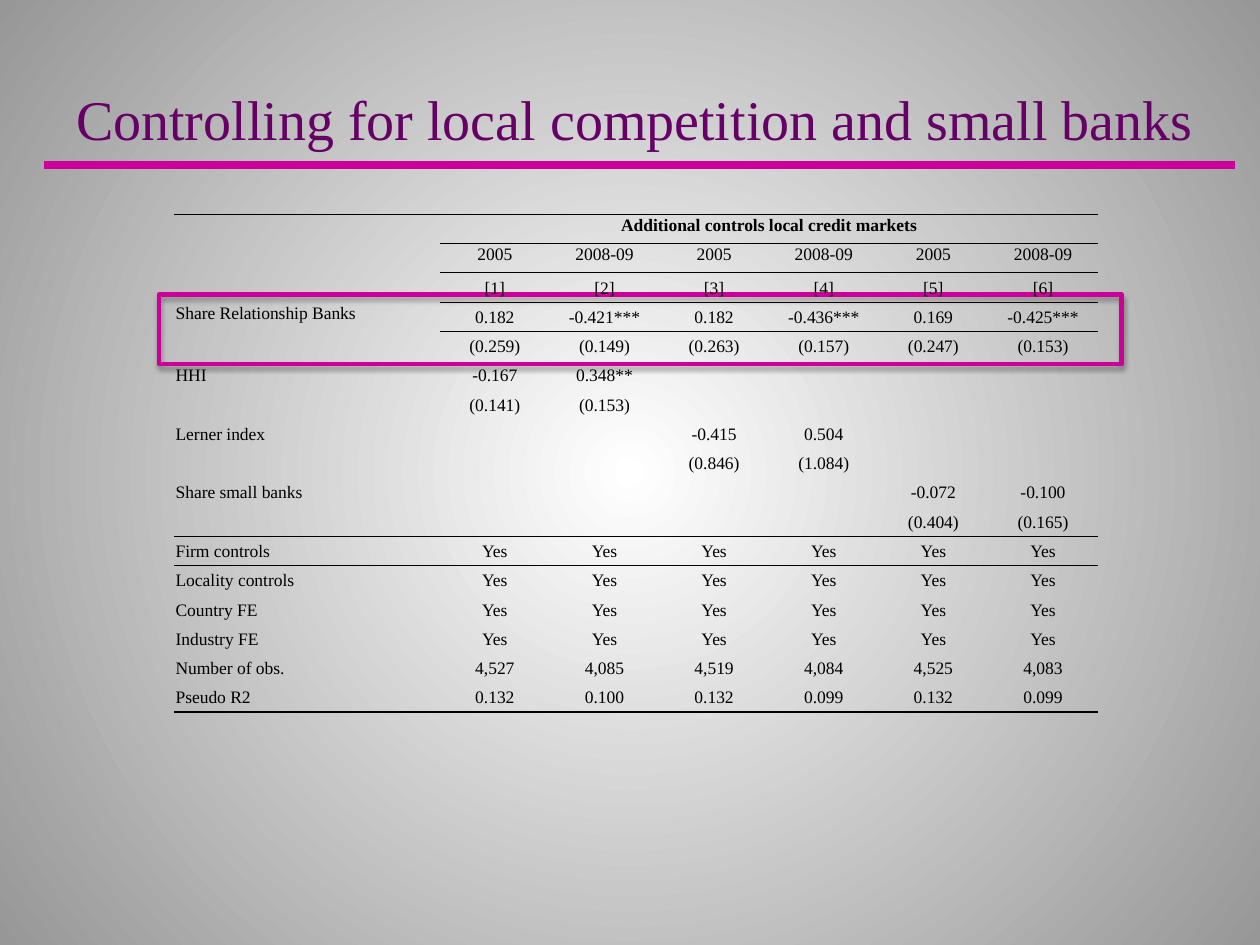
from lxml.etree import SubElement
from pptx import Presentation
from pptx.dml.color import RGBColor
from pptx.enum.shapes import MSO_CONNECTOR, MSO_SHAPE
from pptx.enum.text import MSO_ANCHOR, PP_ALIGN
from pptx.oxml.ns import qn
from pptx.util import Cm, Pt

FONT = "Times New Roman"
MAGENTA = "CC0099"
PURPLE = "660066"
BLACK = "000000"
NO_GRID_STYLE = "{2D5ABB26-0587-4C30-8999-92F81FD0307C}"

YES = ["Yes"] * 6
ROWS = [
    ["", "Additional controls local credit markets"] + [""] * 5,
    [""] + ["2005", "2008-09"] * 3,
    [""] + [f"[{n}]" for n in range(1, 7)],
    ["Share Relationship Banks", "0.182", "-0.421***", "0.182", "-0.436***", "0.169", "-0.425***"],
    ["", "(0.259)", "(0.149)", "(0.263)", "(0.157)", "(0.247)", "(0.153)"],
    ["HHI", "-0.167", "0.348**", "", "", "", ""],
    ["", "(0.141)", "(0.153)", "", "", "", ""],
    ["Lerner index", "", "", "-0.415", "0.504", "", ""],
    ["", "", "", "(0.846)", "(1.084)", "", ""],
    ["Share small banks", "", "", "", "", "-0.072", "-0.100"],
    ["", "", "", "", "", "(0.404)", "(0.165)"],
    ["Firm controls"] + YES,
    ["Locality controls"] + YES,
    ["Country FE"] + YES,
    ["Industry FE"] + YES,
    ["Number of obs.", "4,527", "4,085", "4,519", "4,084", "4,525", "4,083"],
    ["Pseudo R2", "0.132", "0.100", "0.132", "0.099", "0.132", "0.099"],
]
# Rule above a row: row -> (first column, width in points)
RULES_ABOVE = {0: (0, 1), 1: (1, 0.5), 2: (1, 0.5), 3: (1, 0.5), 11: (0, 0.5), 17: (0, 1)}


def rgb(hex_color):
    return RGBColor.from_string(hex_color)


def style_text(p, size, color, align, bold=False):
    p.alignment = align
    p.font.name = FONT
    p.font.size = Pt(size)
    p.font.bold = bold
    p.font.color.rgb = rgb(color)


def add_background(s):
    """Radial gradient, white in the centre and grey at the edge."""
    fill = s.background.fill
    fill.gradient()
    for stop, color in zip(fill.gradient_stops, ("FFFFFF", "979797")):
        stop.color.rgb = rgb(color)
    for stop, position in zip(fill.gradient_stops, (0, 1)):
        stop.position = position
    grad = s.background._cSld.find(".//" + qn("a:gradFill"))
    for lin in grad.findall(qn("a:lin")):
        grad.remove(lin)
    radial = SubElement(grad, qn("a:path"), path="circle")
    SubElement(radial, qn("a:fillToRect"), {side: "50000" for side in "ltrb"})


def add_title(s, text, left, top, width, height):
    """Title with a thick rule just below it."""
    title = s.shapes.title
    title.left, title.top, title.width, title.height = left, top, width, height
    tf = title.text_frame
    tf.text = text
    tf.vertical_anchor = MSO_ANCHOR.BOTTOM
    style_text(tf.paragraphs[0], 32, PURPLE, PP_ALIGN.CENTER)

    y = top + height + Cm(0.15)
    rule = s.shapes.add_connector(MSO_CONNECTOR.STRAIGHT, left + Cm(0.05), y,
                                  left + width + Cm(0.13), y)
    rule.line.color.rgb = rgb(MAGENTA)
    rule.line.width = Pt(4.5)
    SubElement(rule._element.spPr, qn("a:effectLst"))


def add_highlight(s, left, top, width, height):
    """Unfilled frame with a soft shadow below."""
    sp = s.shapes.add_shape(MSO_SHAPE.RECTANGLE, left, top, width, height)
    sp.fill.background()
    sp.line.color.rgb = rgb(MAGENTA)
    sp.line.width = Pt(2.5)
    sp.shadow.inherit = False
    effects = sp._element.spPr.find(qn("a:effectLst"))
    shadow = SubElement(effects, qn("a:outerShdw"), blurRad=str(Pt(3.1)),
                        dist=str(Pt(1.8)), dir="5400000", rotWithShape="0")
    color = SubElement(shadow, qn("a:srgbClr"), val=BLACK)
    SubElement(color, qn("a:alpha"), val="35000")


def add_border(cell, side, width):
    ln = SubElement(cell._tc.get_or_add_tcPr(), qn(f"a:ln{side}"), w=str(Pt(width)))
    SubElement(SubElement(ln, qn("a:solidFill")), qn("a:srgbClr"), val=BLACK)


def fill_cell(cell, text, row, col):
    cell.margin_left = cell.margin_right = cell.margin_top = Cm(0.03)
    cell.margin_bottom = 0
    top_anchored = row < 2 or (row, col) == (3, 0)
    cell.vertical_anchor = MSO_ANCHOR.TOP if top_anchored else MSO_ANCHOR.MIDDLE
    p = cell.text_frame.paragraphs[0]
    style_text(p, 10, BLACK, PP_ALIGN.CENTER if col else PP_ALIGN.LEFT, bold=row == 0)
    if text:
        p.add_run().text = text
    else:
        SubElement(p._p, qn("a:endParaRPr"), sz="1000")
    for side, rule_row in (("T", row), ("B", row + 1)):
        first_col, width = RULES_ABOVE.get(rule_row, (len(ROWS[0]), 0))
        if col >= first_col:
            add_border(cell, side, width)
    cell.fill.background()


def add_results_table(s, left, top, label_width, value_width, row_height):
    n_rows, n_cols = len(ROWS), len(ROWS[0])
    frame = s.shapes.add_table(n_rows, n_cols, left, top,
                               label_width + value_width * (n_cols - 1), row_height * n_rows)
    table = frame.table
    table.first_row = table.horz_banding = False
    table._tbl.tblPr.find(qn("a:tableStyleId")).text = NO_GRID_STYLE
    for col, column in enumerate(table.columns):
        column.width = value_width if col else label_width
    for row, values in enumerate(ROWS):
        table.rows[row].height = row_height
        for col, text in enumerate(values):
            fill_cell(table.cell(row, col), text, row, col)
    table.cell(0, 1).merge(table.cell(0, n_cols - 1))
    table.cell(3, 0).merge(table.cell(4, 0))


def main():
    prs = Presentation()
    prs.slide_width, prs.slide_height = Cm(25.4), Cm(19.05)
    s = prs.slides.add_slide(prs.slide_layouts[5])
    add_background(s)
    add_highlight(s, Cm(3.2), Cm(5.94), Cm(19.41), Cm(1.4))
    add_title(s, "Controlling for local competition and small banks",
              Cm(0.84), Cm(0.64), Cm(23.93), Cm(2.54))
    add_results_table(s, Cm(3.51), Cm(4.32), Cm(5.36), Cm(2.21), Cm(0.59))
    prs.save("out.pptx")


if __name__ == "__main__":
    main()
